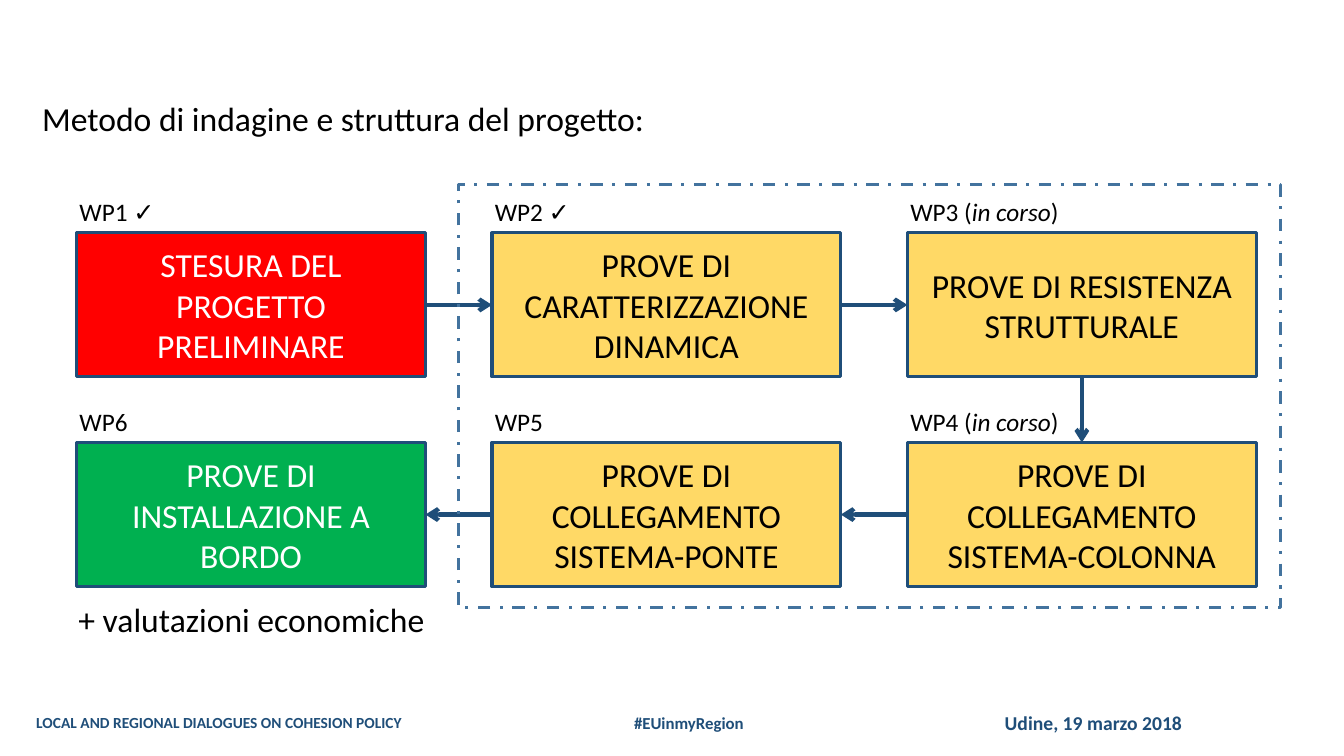
from pptx import Presentation
from pptx.dml.color import RGBColor
from pptx.enum.dml import MSO_LINE
from pptx.enum.shapes import MSO_CONNECTOR, MSO_SHAPE
from pptx.enum.text import MSO_ANCHOR, PP_ALIGN
from pptx.oxml.ns import qn
from pptx.util import Inches, Pt
from lxml.etree import SubElement

COLORS = {
    "navy": "1F4E79",
    "frame": "43739E",
    "red": "FF0000",
    "yellow": "FFD966",
    "green": "00B050",
    "black": "000000",
    "white": "FFFFFF",
}
TOP, LEFT, BOTTOM, RIGHT = range(4)
BOX_W, BOX_H = 3.46, 1.43
COL_X = [0.76 + 4.12 * col for col in range(3)]
ROW_Y = [2.31, 4.39]

PACKAGES = [
    ("WP1", " ✓", "", "STESURA DEL PROGETTO PRELIMINARE", 0, 0, "red", "white"),
    ("WP2", " ✓", "", "PROVE DI CARATTERIZZAZIONE DINAMICA", 1, 0, "yellow", "black"),
    ("WP3", "", "in corso", "PROVE DI RESISTENZA STRUTTURALE", 2, 0, "yellow", "black"),
    ("WP4", "", "in corso", "PROVE DI COLLEGAMENTO SISTEMA-COLONNA", 2, 1, "yellow", "black"),
    ("WP5", "", "", "PROVE DI COLLEGAMENTO SISTEMA-PONTE", 1, 1, "yellow", "black"),
    ("WP6", "", "", "PROVE DI INSTALLAZIONE A BORDO", 0, 1, "green", "white"),
]
ARROW_SIDES = [(RIGHT, LEFT), (RIGHT, LEFT), (BOTTOM, TOP), (LEFT, RIGHT), (LEFT, RIGHT)]


def rgb(name):
    return RGBColor.from_string(COLORS[name])


def write(frame, runs, size=24, color="black", bold=False, align=PP_ALIGN.LEFT,
          anchor=MSO_ANCHOR.TOP, wrap=True):
    frame.word_wrap = wrap
    frame.vertical_anchor = anchor
    paragraph = frame.paragraphs[0]
    paragraph.alignment = align
    for text, italic in runs:
        run = paragraph.add_run()
        run.text = text
        run.font.name = "Calibri"
        run.font.size = Pt(size)
        run.font.bold = bold
        run.font.italic = italic
        run.font.color.rgb = rgb(color)


class ProjectSlide:
    def __init__(self, slide):
        self.shapes = slide.shapes

    def text(self, x, y, w, h, *runs, **style):
        area = self.shapes.add_textbox(Inches(x), Inches(y), Inches(w), Inches(h))
        write(area.text_frame, runs, **style)

    def rectangle(self, x, y, w, h, line, fill=None):
        rect = self.shapes.add_shape(
            MSO_SHAPE.RECTANGLE, Inches(x), Inches(y), Inches(w), Inches(h))
        rect.shadow.inherit = False
        if fill:
            rect.fill.solid()
            rect.fill.fore_color.rgb = rgb(fill)
        else:
            rect.fill.background()
        rect.line.color.rgb = rgb(line)
        rect.line.width = Pt(2.25)
        return rect

    def step(self, x, y, title, fill, color):
        step = self.rectangle(x, y, BOX_W, BOX_H, "navy", fill)
        write(step.text_frame, [(title, False)], color=color,
              align=PP_ALIGN.CENTER, anchor=MSO_ANCHOR.MIDDLE)
        return step

    def arrow(self, source, source_side, target, target_side):
        arrow = self.shapes.add_connector(MSO_CONNECTOR.STRAIGHT, 0, 0, 0, 0)
        arrow.begin_connect(source, source_side)
        arrow.end_connect(target, target_side)
        arrow.line.color.rgb = rgb("navy")
        arrow.line.width = Pt(3)
        SubElement(arrow.line._get_or_add_ln(), qn("a:tailEnd"), type="arrow")
        SubElement(arrow._element.spPr, qn("a:effectLst"))

    def dashed_frame(self, x, y, w, h):
        frame = self.rectangle(x, y, w, h, "frame")
        frame.line.dash_style = MSO_LINE.DASH_DOT


def main():
    deck = Presentation()
    deck.slide_width, deck.slide_height = Inches(13.33), Inches(7.5)
    project = ProjectSlide(deck.slides.add_slide(deck.slide_layouts[6]))

    footer = {"color": "navy", "bold": True}
    project.text(9.5, 7, 2.69, 0.34, ("Udine, 19 marzo 2018", False),
                 size=14, align=PP_ALIGN.CENTER, **footer)
    project.text(0.24, 7.03, 3.87, 0.29,
                 ("LOCAL AND REGIONAL DIALOGUES ON COHESION POLICY", False),
                 size=11, align=PP_ALIGN.CENTER, wrap=False, **footer)
    project.text(6.19, 7.02, 1.46, 0.3, ("#EUinmyRegion", False), size=12, **footer)

    project.text(0.32, 0.92, 12.4, 0.5, ("Metodo di indagine e struttura del progetto:", False))
    project.text(0.68, 5.89, 3.8, 0.5, ("+ valutazioni economiche", False))

    steps = []
    for code, mark, status, title, col, row, fill, color in PACKAGES:
        x, y = COL_X[col], ROW_Y[row]
        steps.append(project.step(x, y, title, fill, color))
        label = [(code + mark, False)]
        if status:
            label = [(code + " (", False), (status, True), (")", False)]
        project.text(x - 0.07, y - 0.41, 2, 0.4, *label, size=18)

    for source, target, (start, end) in zip(steps, steps[1:], ARROW_SIDES):
        project.arrow(source, start, target, end)

    project.dashed_frame(4.55, 1.83, 8.15, 4.2)
    deck.save("out.pptx")


if __name__ == "__main__":
    main()
